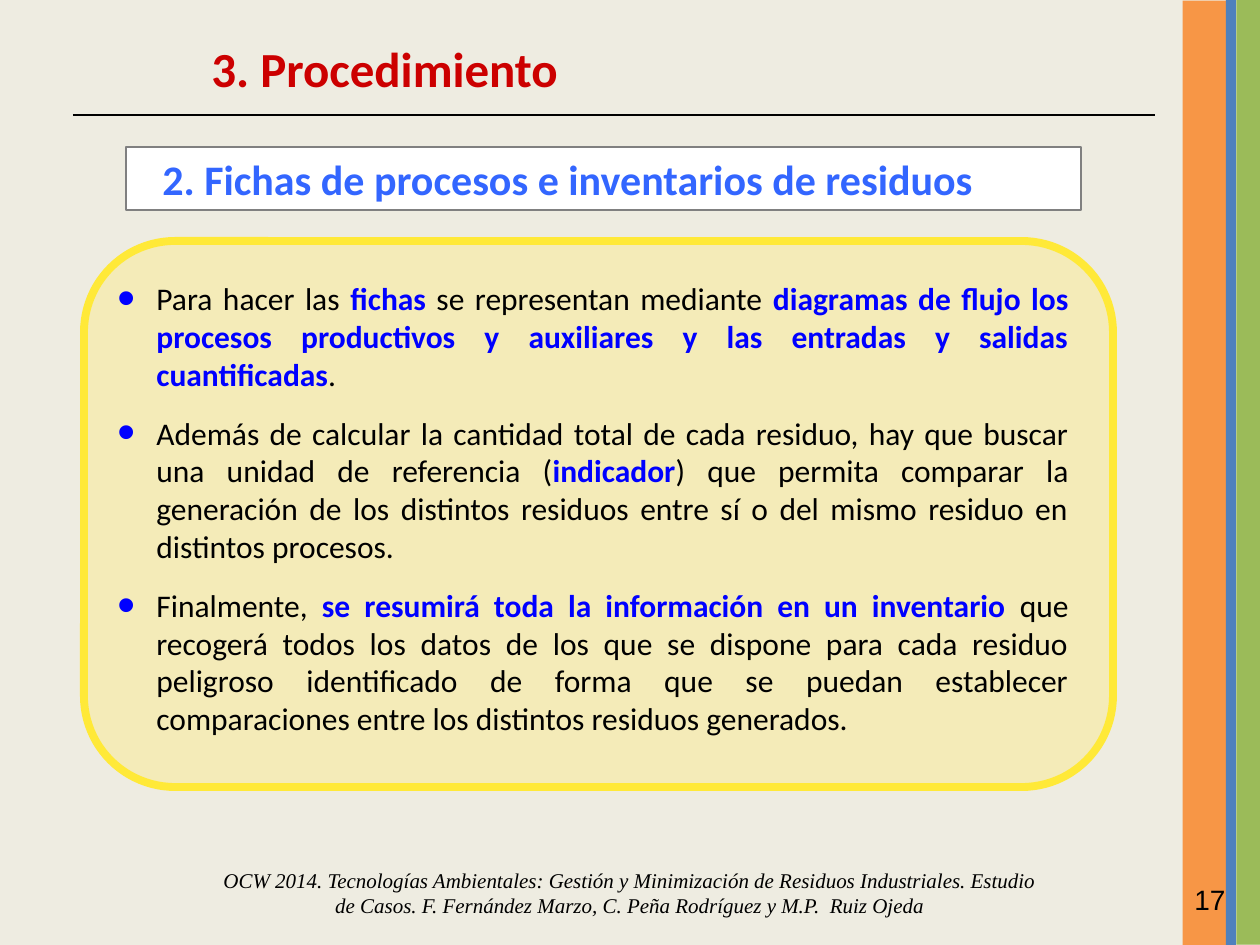
import pptx
import pptx.util
import pptx.dml.color
import pptx.enum.shapes
import pptx.enum.text
import pptx.oxml
import pptx.oxml.ns

RGB = pptx.dml.color.RGBColor
SHAPE = pptx.enum.shapes.MSO_SHAPE
ALIGN = pptx.enum.text.PP_ALIGN
ANCHOR = pptx.enum.text.MSO_ANCHOR
SCALE = 914400 / 126  # EMU per px

PAPER = RGB(0xEE, 0xEC, 0xE1)
ORANGE = RGB(0xF7, 0x96, 0x46)
GREEN = RGB(0x9B, 0xBB, 0x59)
STEEL = RGB(0x4F, 0x81, 0xBD)
BLACK = RGB(0, 0, 0)
WHITE = RGB(0xFF, 0xFF, 0xFF)
GRAY = RGB(0x80, 0x80, 0x80)
RED = RGB(0xCC, 0, 0)
SKY = RGB(0x33, 0x66, 0xFF)
BLUE = RGB(0, 0, 0xFF)
CREAM = RGB(0xF4, 0xEB, 0xB8)
YELLOW = RGB(0xFF, 0xE9, 0x38)

# Words between asterisks are emphasised
POINTS = [
    "Para hacer las *fichas* se representan mediante *diagramas de flujo los "
    "procesos productivos y auxiliares y las entradas y salidas cuantificadas*.",
    "Además de calcular la cantidad total de cada residuo, hay que buscar una "
    "unidad de referencia (*indicador*) que permita comparar la generación de "
    "los distintos residuos entre sí o del mismo residuo en distintos procesos.",
    "Finalmente, *se resumirá toda la información en un inventario *que "
    "recogerá todos los datos de los que se dispone para cada residuo peligroso "
    "identificado de forma que se puedan establecer comparaciones entre los "
    "distintos residuos generados. ",
]


def emu(px):
    return pptx.util.Emu(round(px * SCALE))


def add_mark(props, color):
    """Give a paragraph a round bullet."""
    for tag in (f'<a:buClr {{}}><a:srgbClr val="{color}"/></a:buClr>',
                '<a:buSzPct {} val="161000"/>',
                '<a:buFont {} typeface="Arial"/>',
                '<a:buChar {} char="•"/>'):
        props.append(pptx.oxml.parse_xml(tag.format(pptx.oxml.ns.nsdecls("a"))))


def write(frame, text, size=18, font="Calibri", color=BLACK, bold=False,
          italic=False, align=ALIGN.LEFT, left=0, first=0, before=0,
          mark=None, more=False):
    """Write one paragraph; more=True adds it after those already there."""
    para = frame.add_paragraph() if more else frame.paragraphs[0]
    para.alignment = align
    para.space_before = pptx.util.Pt(before)
    props = para._p.get_or_add_pPr()
    props.set("marL", str(emu(left)))
    props.set("indent", str(emu(first)))
    if mark is not None:
        add_mark(props, mark)
    for i, part in enumerate(text.split("*")):
        strong = i % 2 == 1
        run = para.add_run()
        run.text = part
        run.font.size = pptx.util.Pt(size)
        run.font.name = font
        run.font.bold = bold or strong
        run.font.italic = italic
        run.font.color.rgb = BLUE if strong else color


class Deck:
    def __init__(self, wide, high):
        self.show = pptx.Presentation()
        self.show.slide_width = emu(wide)
        self.show.slide_height = emu(high)
        self.slide = self.show.slides.add_slide(self.show.slide_layouts[6])
        self.slide.background.fill.solid()
        self.slide.background.fill.fore_color.rgb = PAPER

    def box(self, x, y, w, h, fill, kind=SHAPE.RECTANGLE, line=None,
            width=1, turn=0):
        shape = self.slide.shapes.add_shape(kind, *map(emu, (x, y, w, h)))
        shape.shadow.inherit = False
        shape.rotation = turn
        shape.fill.solid()
        shape.fill.fore_color.rgb = fill
        if line is None:
            shape.line.fill.background()
        else:
            shape.line.color.rgb = line
            shape.line.width = pptx.util.Pt(width)
        shape.text_frame.vertical_anchor = ANCHOR.TOP
        return shape.text_frame

    def text(self, x, y, w, h, anchor=ANCHOR.TOP):
        frame = self.slide.shapes.add_textbox(*map(emu, (x, y, w, h))).text_frame
        frame.word_wrap = True
        frame.vertical_anchor = anchor
        return frame

    def rule(self, x1, y1, x2, y2, color, width):
        line = self.slide.shapes.add_connector(
            pptx.enum.shapes.MSO_CONNECTOR.STRAIGHT, *map(emu, (x1, y1, x2, y2)))
        line.line.color.rgb = color
        line.line.width = pptx.util.Pt(width)
        line._element.spPr.append(pptx.oxml.parse_xml(
            f'<a:effectLst {pptx.oxml.ns.nsdecls("a")}/>'))


def main():
    deck = Deck(1260, 945)

    # Side bands
    deck.box(732, 451, 945, 44, ORANGE, turn=270)
    deck.box(776, 460, 945, 24, GREEN, turn=270)
    deck.box(1226, 0, 10, 945, STEEL)

    # Title and rule
    deck.rule(73, 115, 1155, 115, BLACK, 0.75)
    write(deck.text(199, 32, 577, 72), "3. Procedimiento", size=28, color=RED,
          bold=True, left=48, first=-48)

    # Section heading
    head = deck.box(126, 147, 955, 63, WHITE, line=GRAY, width=1.5)
    write(head, "2. Fichas de procesos e inventarios de residuos", size=24,
          color=SKY, bold=True, left=24)

    # Panel with its points
    deck.box(84, 241, 1029, 546, CREAM, SHAPE.ROUNDED_RECTANGLE, YELLOW, 4.5)
    body = deck.text(105, 273, 976, 475)
    for i, point in enumerate(POINTS):
        write(body, point, align=ALIGN.JUSTIFY, left=39, first=-39, before=12,
              mark=BLUE, more=i > 0)

    # Footer and page number
    write(deck.text(210, 861, 840, 63, ANCHOR.MIDDLE),
          "OCW 2014. Tecnologías Ambientales: Gestión y Minimización de "
          "Residuos Industriales. Estudio de Casos. F. Fernández Marzo, "
          "C. Peña Rodríguez y M.P.  Ruiz Ojeda",
          size=12, font="Times New Roman", italic=True, align=ALIGN.CENTER)
    write(deck.text(1182, 876, 78, 65), "17", size=16, font="Arial")

    deck.show.save("out.pptx")


if __name__ == "__main__":
    main()
